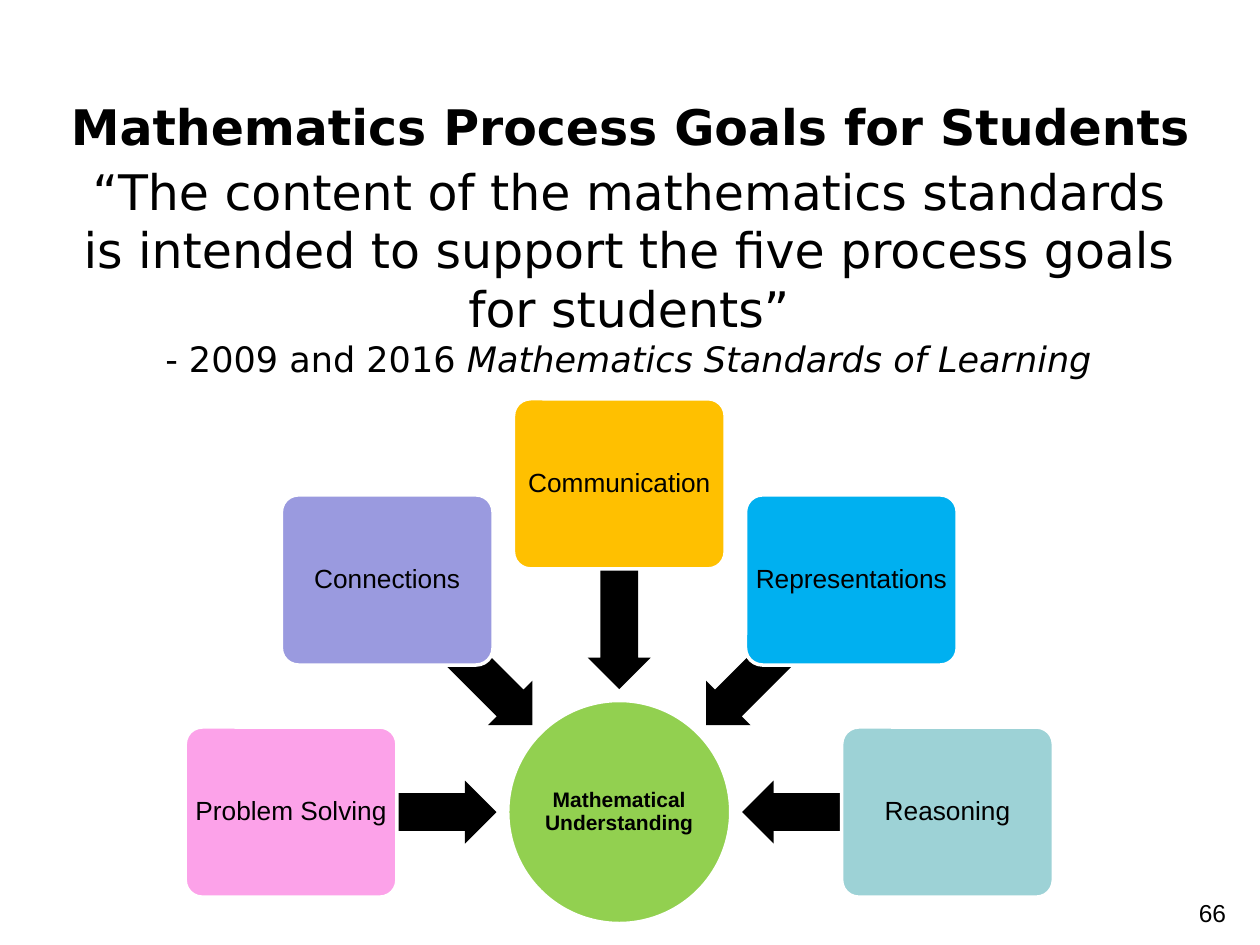
from dataclasses import dataclass
from math import cos, radians, sin

from pptx import Presentation
from pptx.dml.color import RGBColor
from pptx.enum.shapes import MSO_SHAPE
from pptx.enum.text import MSO_ANCHOR, MSO_AUTO_SIZE, PP_ALIGN
from pptx.slide import Slide
from pptx.util import Inches, Pt

BLACK = RGBColor(0x00, 0x00, 0x00)
WHITE = RGBColor(0xFF, 0xFF, 0xFF)
GREEN = RGBColor(0x92, 0xD0, 0x50)
PINK = RGBColor(0xFC, 0xA2, 0xE9)
LILAC = RGBColor(0x9A, 0x9A, 0xDF)
AMBER = RGBColor(0xFF, 0xC0, 0x00)
BLUE = RGBColor(0x00, 0xB0, 0xF0)
TEAL = RGBColor(0x9D, 0xD2, 0xD6)

COLS, ROWS = 100, 75
HUB = (49.15, 64.45)
GOAL_RADIUS, ARROW_RADIUS = 26.05, 17.9
GOALS = [
    ("Problem Solving", PINK),
    ("Connections", LILAC),
    ("Communication", AMBER),
    ("Representations", BLUE),
    ("Reasoning", TEAL),
]
HEADING = {"name": "DejaVu Sans", "size": Pt(28), "bold": True}
QUOTE = {"name": "DejaVu Sans", "size": Pt(28)}
SOURCE = {"name": "DejaVu Sans", "size": Pt(20)}
HUB_LABEL = {"name": "Arial", "size": Pt(12), "bold": True}
GOAL_LABEL = {"name": "Arial", "size": Pt(15)}
NUMBER = {"name": "Arial", "size": Pt(14)}


@dataclass
class Deck:
    """Draws styled elements on the current slide, on a grid of 100 by 75 cells."""

    slide: Slide
    cell: int

    def place(self, *lengths):
        return [round(n * self.cell) for n in lengths]

    def around(self, center, width, height):
        x, y = center
        return self.place(x - width / 2, y - height / 2, width, height)

    def fill_text(self, tf, runs, align=PP_ALIGN.CENTER, anchor=MSO_ANCHOR.TOP):
        tf.word_wrap, tf.auto_size = True, MSO_AUTO_SIZE.NONE
        tf.vertical_anchor = anchor
        p = tf.paragraphs[0]
        p.alignment = align
        for text, style in runs:
            if text == "\n":
                p.add_line_break()
                continue
            r = p.add_run()
            r.text = text
            r.font.color.rgb = BLACK
            for key, value in style.items():
                setattr(r.font, key, value)
        return p

    def title(self, text, box):
        sp = self.slide.shapes.title
        sp.left, sp.top, sp.width, sp.height = self.place(*box)
        self.fill_text(sp.text_frame, [(text, HEADING)], anchor=MSO_ANCHOR.MIDDLE)

    def text(self, runs, box, align=PP_ALIGN.CENTER):
        sp = self.slide.shapes.add_textbox(*self.place(*box))
        self.fill_text(sp.text_frame, runs, align)

    def shape(self, kind, center, size, fill, adjustments=()):
        sp = self.slide.shapes.add_shape(kind, *self.around(center, *size))
        sp.shadow.inherit = False
        sp.fill.solid()
        sp.fill.fore_color.rgb = fill
        for i, value in enumerate(adjustments):
            sp.adjustments[i] = value
        return sp

    def node(self, kind, center, size, fill, label, style, inset, adjustments=()):
        sp = self.shape(kind, center, size, fill, adjustments)
        sp.line.color.rgb, sp.line.width = WHITE, Pt(2)
        tf = sp.text_frame
        for side in ("left", "right", "top", "bottom"):
            setattr(tf, f"margin_{side}", Inches(inset))
        p = self.fill_text(tf, [(label, style)], anchor=MSO_ANCHOR.MIDDLE)
        p.line_spacing = 0.9

    def arrow(self, center, angle):
        sp = self.shape(MSO_SHAPE.LEFT_ARROW, center, (16.3, 5), BLACK, (0.6, 0.5))
        sp.line.fill.background()
        sp.rotation = angle


def orbit(angle, radius):
    a = radians(angle)
    return HUB[0] + radius * cos(a), HUB[1] + radius * sin(a)


def main():
    prs = Presentation()
    prs.slide_width, prs.slide_height = Inches(COLS / 10), Inches(ROWS / 10)
    s = prs.slides.add_slide(prs.slide_layouts[5])
    deck = Deck(s, prs.slide_width // COLS)

    deck.title("Mathematics Process Goals for Students", (0, 5, 100, 10))
    deck.node(MSO_SHAPE.OVAL, HUB, (17.7, 17.7), GREEN,
              "Mathematical Understanding", HUB_LABEL, 0.01)
    for i, (label, fill) in enumerate(GOALS):
        angle = (180 + 45 * i) % 360
        deck.arrow(orbit(angle, ARROW_RADIUS), angle)
        deck.node(MSO_SHAPE.ROUNDED_RECTANGLE, orbit(angle, GOAL_RADIUS),
                  (16.8, 13.5), fill, label, GOAL_LABEL, 0.03, (0.1,))
    deck.text([
        ("“The content of the mathematics standards is intended to support "
         "the five process goals for students”", QUOTE),
        ("\n", QUOTE),
        ("- 2009 and 2016 ", SOURCE),
        ("Mathematics Standards of Learning", {**SOURCE, "italic": True}),
    ], (4.8, 12.3, 90.2, 15))
    deck.text([("66", NUMBER)], (75, 70.8, 23.3, 4.2), PP_ALIGN.RIGHT)
    prs.save("out.pptx")


if __name__ == "__main__":
    main()
